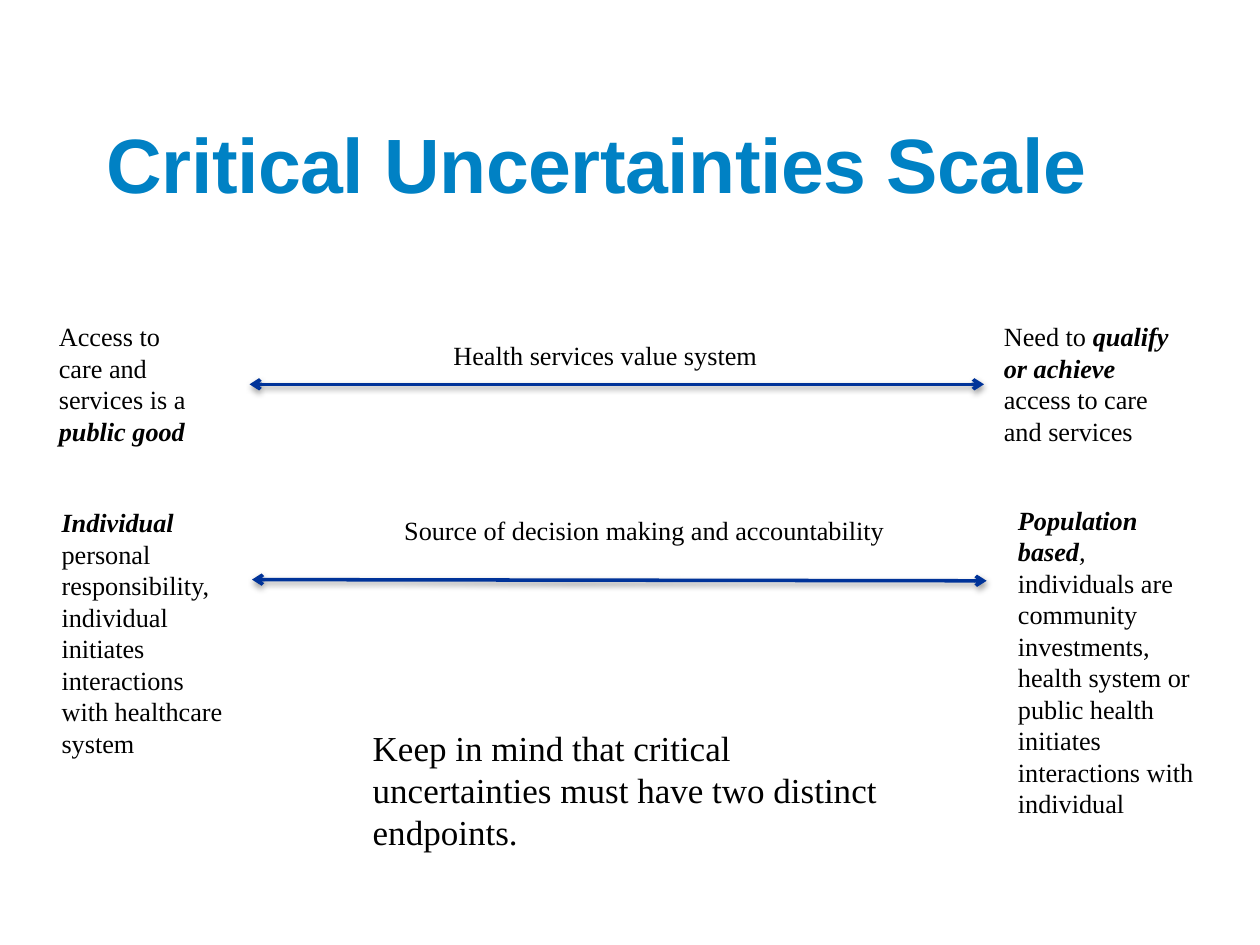
from lxml.etree import SubElement
from pptx import Presentation
from pptx.dml.color import RGBColor
from pptx.enum.shapes import MSO_CONNECTOR as Connector
from pptx.enum.text import MSO_ANCHOR as Anchor, MSO_AUTO_SIZE as AutoSize
from pptx.oxml.ns import qn
from pptx.util import Pt

BLACK, BLUE, NAVY, WHITE = "000000", "0081C4", "003399", "FFFFFF"
SERIF = "Times New Roman"


def color(value):
    return RGBColor.from_string(value)


def add_text(page, box, spans, size=15):
    shape = page.shapes.add_textbox(*map(Pt, box))
    frame = shape.text_frame
    frame.word_wrap = True
    frame.auto_size = AutoSize.SHAPE_TO_FIT_TEXT
    para = frame.paragraphs[0]
    for text, bold, italic in spans:
        span = para.add_run()
        span.text = text
        font = span.font
        font.name, font.size = SERIF, Pt(size)
        font.bold, font.italic = bold, italic
        font.color.rgb = color(BLACK)


def add_title(page, box, text):
    shape = page.shapes.add_textbox(*map(Pt, box))
    shape.fill.solid()
    shape.fill.fore_color.rgb = color(WHITE)
    frame = shape.text_frame
    frame.word_wrap = True
    frame.vertical_anchor = Anchor.MIDDLE
    frame.text = text
    font = frame.paragraphs[0].runs[0].font
    font.name, font.size, font.bold = "Arial", Pt(44), True
    font.color.rgb = color(BLUE)
    frame.paragraphs[0].runs[0]._r.get_or_add_rPr().set("spc", "-30")


def add_arrow(page, ends):
    arrow = page.shapes.add_connector(Connector.STRAIGHT, *map(Pt, ends))
    arrow.line.color.rgb = color(NAVY)
    arrow.line.width = Pt(2)
    line = arrow.line._get_or_add_ln()
    for end in ("a:headEnd", "a:tailEnd"):
        SubElement(line, qn(end), type="arrow")
    effects = SubElement(arrow._element.spPr, qn("a:effectLst"))
    shadow = SubElement(effects, qn("a:outerShdw"), blurRad=str(Pt(3.15)),
                        dist=str(Pt(1.57)), dir="5400000", rotWithShape="0")
    shade = SubElement(shadow, qn("a:srgbClr"), val=BLACK)
    SubElement(shade, qn("a:alpha"), val="38000")


def add_scale(page, ends, label_box, label, left_box, left, right_box, right):
    add_arrow(page, ends)
    add_text(page, label_box, [(label, False, False)])
    add_text(page, left_box, left)
    add_text(page, right_box, right)


def main():
    deck = Presentation()
    deck.slide_width, deck.slide_height = Pt(720), Pt(540)
    page = deck.slides.add_slide(deck.slide_layouts[6])
    add_title(page, (54, 48, 612, 90), "Critical Uncertainties Scale")
    add_scale(
        page, (142.6, 219.6, 562.3, 219.6),
        (252, 190.1, 200.2, 25.2), "Health services value system",
        (26.6, 179.5, 96.5, 80),
        [("Access to care and services is a ", False, False),
         ("public good", True, True)],
        (566.6, 179.7, 110.9, 80),
        [("Need to ", False, False),
         ("qualify or achieve ", True, True),
         ("access to care and services", False, False)])
    add_scale(
        page, (144, 331.2, 563.8, 331.9),
        (223.9, 290.2, 292.3, 25.2),
        "Source of decision making and accountability",
        (28.1, 286, 114.5, 170.6),
        [("Individual ", True, True),
         ("personal responsibility, individual initiates interactions "
          "with healthcare system", False, False)],
        (574.6, 284.4, 121.7, 207.4),
        [("Population based", True, True),
         (", ", False, True),
         ("individuals are community investments, health system or "
          "public health initiates interactions with individual",
          False, False)])
    add_text(page, (205.9, 411.8, 326.2, 55.4),
             [("Keep in mind that critical uncertainties must have two "
               "distinct endpoints.", False, False)], size=20)
    deck.save("out.pptx")


if __name__ == "__main__":
    main()
